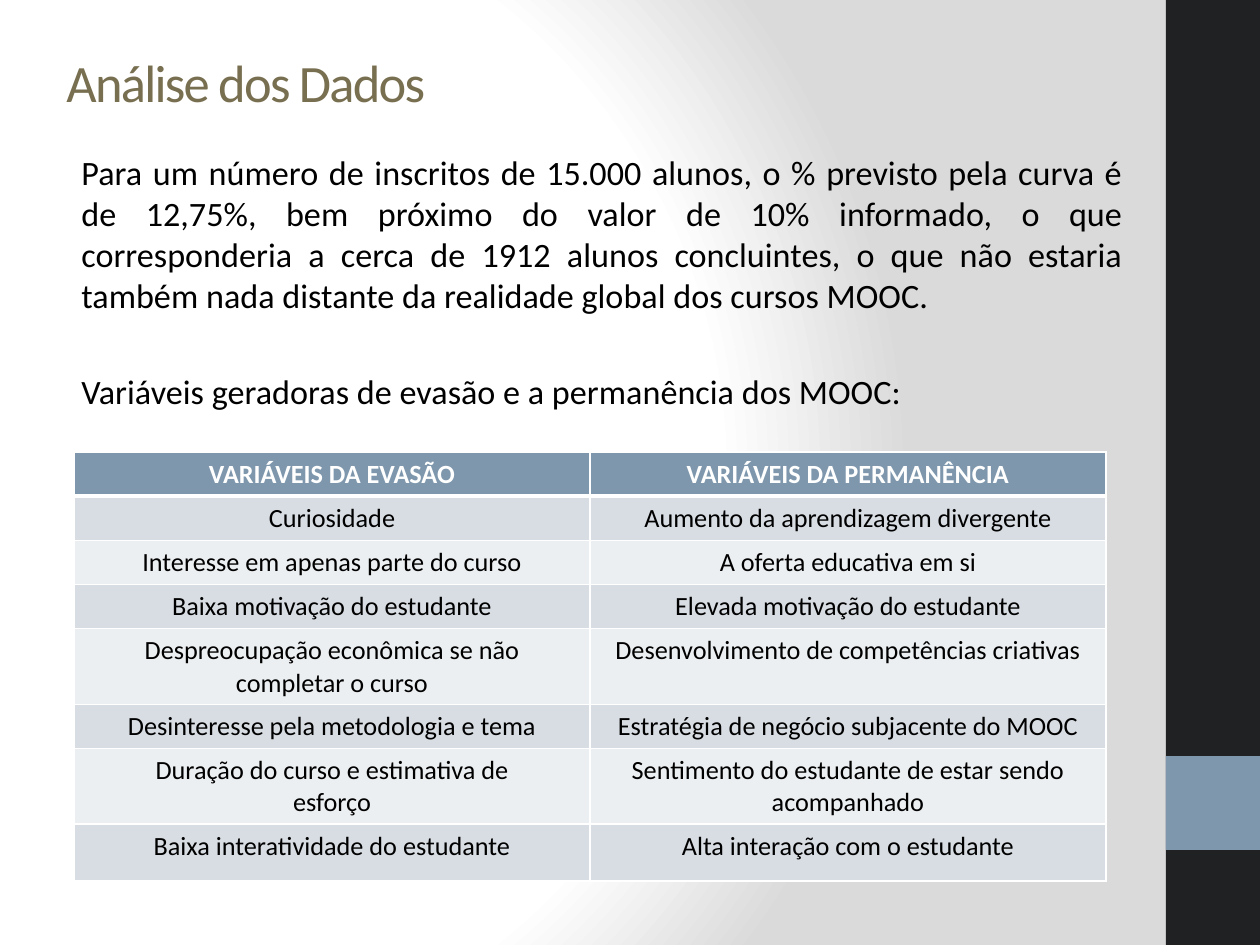
from lxml import etree
from pptx import Presentation
from pptx import util as u
from pptx.dml.color import RGBColor
from pptx.enum import shapes, text
from pptx.oxml import parse_xml
from pptx.oxml.ns import qn

TITLE = "Análise dos Dados"
BODY = [
    ("Para um número de inscritos de 15.000 alunos, o % previsto pela curva é "
     "de 12,75%, bem próximo do valor de 10% informado, o que corresponderia a "
     "cerca de 1912 alunos concluintes, o que não estaria também nada distante "
     "da realidade global dos cursos MOOC.", 0),
    ("Variáveis geradoras de evasão e a permanência dos MOOC:", 31.5),
]
ROWS = [
    (40, "VARIÁVEIS DA EVASÃO", "VARIÁVEIS DA PERMANÊNCIA"),
    (40, "Curiosidade", "Aumento da aprendizagem divergente"),
    (40, "Interesse em apenas parte do curso", "A oferta educativa em si"),
    (40, "Baixa motivação do estudante", "Elevada motivação do estudante"),
    (69, "Despreocupação econômica se não\ncompletar o curso",
     "Desenvolvimento de competências criativas"),
    (40, "Desinteresse pela metodologia e tema",
     "Estratégia de negócio subjacente do MOOC"),
    (69, "Duração do curso e estimativa de\nesforço",
     "Sentimento do estudante de estar sendo\nacompanhado"),
    (57, "Baixa interatividade do estudante", "Alta interação com o estudante"),
]
BARS = [((1166, 0, 94, 945), "1F2123"), ((1166, 756, 94, 94), "7E97AD")]
HEAD, BANDS = "7E97AD", ("ECEFF1", "D8DDE3")
STOPS = [(0, "FFFFFF"), (75, "FFFFFF"), (100, "DADADA")]
A = "http://schemas.openxmlformats.org/drawingml/2006/main"
P = "http://schemas.openxmlformats.org/presentationml/2006/main"


def px(n):
    return u.Emu(round(n * 914400 / 126))


def box(*dims):
    return [px(n) for n in dims]


def rgb(code):
    return RGBColor.from_string(code)


def style(para, size, color, align, bold=False):
    font = para.font
    font.name, font.size, font.bold = "Calibri", u.Pt(size), bold
    font.color.rgb = rgb(color)
    para.alignment = align


def paint(slide):
    stops = "".join(f'<a:gs pos="{pos * 1000}"><a:srgbClr val="{code}"/></a:gs>'
                    for pos, code in STOPS)
    back = parse_xml(
        f'<p:bg xmlns:p="{P}" xmlns:a="{A}"><p:bgPr><a:gradFill rotWithShape="1">'
        f'<a:gsLst>{stops}</a:gsLst><a:path path="circle">'
        '<a:fillToRect l="20000" t="50000" r="100000" b="50000"/></a:path>'
        '</a:gradFill><a:effectLst/></p:bgPr></p:bg>')
    slide.element.cSld.insert(0, back)


def edge(cell, base):
    props = cell._tc.get_or_add_tcPr()
    for side in "LRTB":
        width = base if side == "B" else 1
        line = etree.SubElement(props, qn(f"a:ln{side}"), w=str(u.Pt(width)))
        fill = etree.SubElement(line, qn("a:solidFill"))
        etree.SubElement(fill, qn("a:srgbClr"), val="FFFFFF")


def write(slide, *dims):
    frame = slide.shapes.add_textbox(*box(*dims)).text_frame
    frame.word_wrap = True
    return frame


def main():
    deck = Presentation()
    deck.slide_width, deck.slide_height = box(1260, 945)
    slide = deck.slides.add_slide(deck.slide_layouts[6])
    paint(slide)

    for dims, color in BARS:
        bar = slide.shapes.add_shape(shapes.MSO_SHAPE.RECTANGLE, *box(*dims))
        bar.shadow.inherit = False
        bar.fill.solid()
        bar.fill.fore_color.rgb = rgb(color)
        bar.line.fill.background()

    frame = write(slide, 54, 28, 1050, 107)
    frame.vertical_anchor = text.MSO_ANCHOR.MIDDLE
    para = frame.paragraphs[0]
    run = para.add_run()
    run.text = TITLE
    run._r.get_or_add_rPr().set("spc", "-100")
    style(para, 30, "786F51", text.PP_ALIGN.LEFT)

    frame = write(slide, 54, 145, 1082, 724)
    frame.text = "\n".join(words for words, _ in BODY)
    for para, (_, gap) in zip(frame.paragraphs, BODY):
        style(para, 19.5, "000000", text.PP_ALIGN.JUSTIFY)
        para.space_before = u.Pt(gap)
        para._p.get_or_add_pPr().set("marL", str(px(15)))

    table = slide.shapes.add_table(len(ROWS), 2, *box(74, 452, 1032, 395)).table
    for r, (height, *words) in enumerate(ROWS):
        table.rows[r].height = px(height)
        for c, word in enumerate(words):
            cell = table.cell(r, c)
            cell.text = word
            edge(cell, 1 if r else 3)
            cell.fill.solid()
            cell.fill.fore_color.rgb = rgb(BANDS[r % 2] if r else HEAD)
            for para in cell.text_frame.paragraphs:
                style(para, 15, "000000" if r else "FFFFFF",
                      text.PP_ALIGN.CENTER, r == 0)

    deck.save("out.pptx")


if __name__ == "__main__":
    main()
